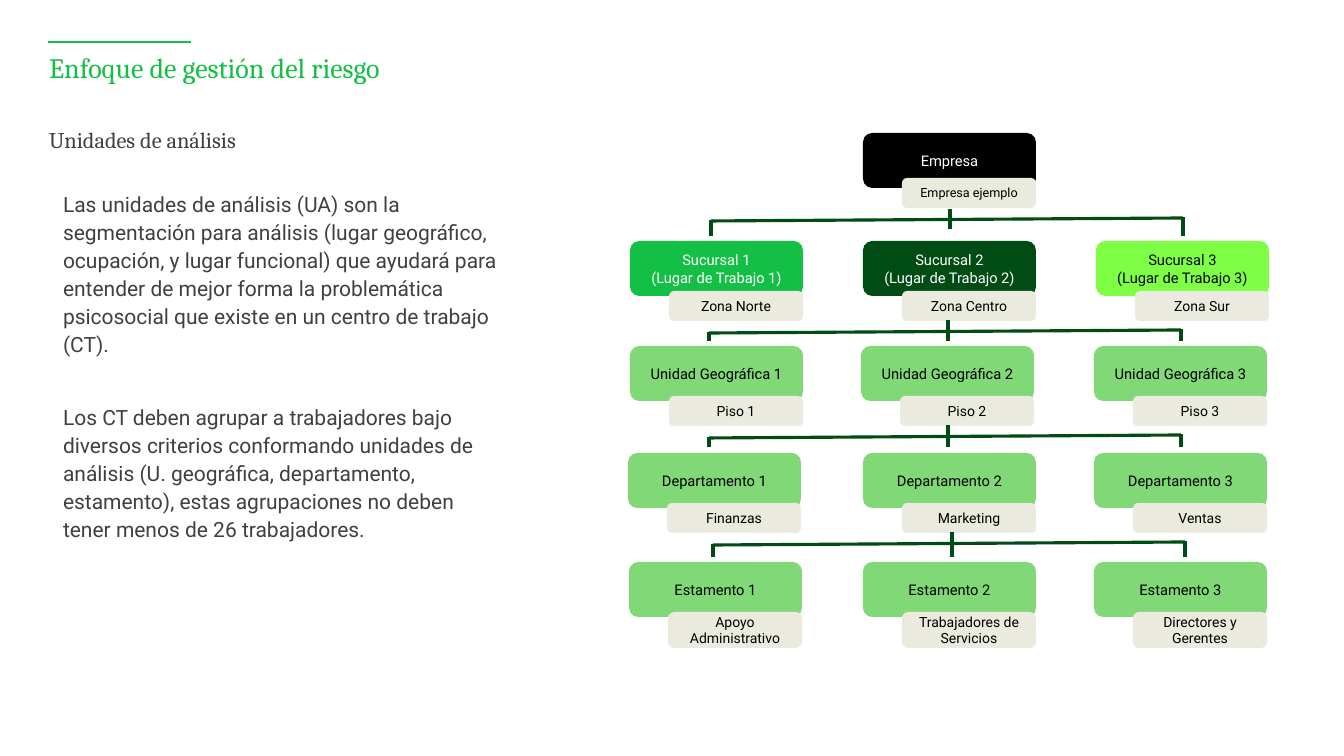
import lxml.etree
import pptx
import pptx.dml.color
import pptx.enum.shapes
import pptx.enum.text
import pptx.oxml.ns
import pptx.util

RGBColor = pptx.dml.color.RGBColor
GREEN = RGBColor(0x15, 0xBF, 0x45)
BRANCH_GREEN = RGBColor(0x13, 0xC0, 0x45)
DARK_GREEN = RGBColor(0x00, 0x4C, 0x14)
LIME = RGBColor(0x7E, 0xFF, 0x45)
SOFT_GREEN = RGBColor(0x81, 0xD8, 0x77)
BEIGE = RGBColor(0xEA, 0xEA, 0xDE)
GREY = RGBColor(0x40, 0x40, 0x40)
BLACK = RGBColor(0x00, 0x00, 0x00)
WHITE = RGBColor(0xFF, 0xFF, 0xFF)

EMU_PER_PX = 914400 / 100.8
HEADING_FONT = "Cambria"
BODY_FONT = "Roboto"
BOX_WIDTH, BOX_HEIGHT = 173, 55
TAG_WIDTH, TAG_SHIFT = 134, 39

PARAGRAPHS = [
    "Las unidades de análisis (UA) son la segmentación para análisis (lugar geográfico, "
    "ocupación, y lugar funcional) que ayudará para entender de mejor forma la problemática "
    "psicosocial que existe en un centro de trabajo (CT).",
    "Los CT deben agrupar a trabajadores bajo diversos criterios conformando unidades de "
    "análisis (U. geográfica, departamento, estamento), estas agrupaciones no deben tener "
    "menos de 26 trabajadores.",
]
BRANCH_STYLES = [(BRANCH_GREEN, WHITE), (DARK_GREEN, WHITE), (LIME, BLACK)]
UNIT_STYLES = [(SOFT_GREEN, BLACK)] * 3
LEVELS = [
    (241, 30, (630, 863, 1096), BRANCH_STYLES, ["Sucursal {}", "(Lugar de Trabajo {})"],
     ("Zona Norte", "Zona Centro", "Zona Sur")),
    (346, 30, (630, 861, 1094), UNIT_STYLES, ["Unidad Geográfica {}"],
     ("Piso 1", "Piso 2", "Piso 3")),
    (453, 30, (628, 863, 1094), UNIT_STYLES, ["Departamento {}"],
     ("Finanzas", "Marketing", "Ventas")),
    (562, 36, (629, 863, 1094), UNIT_STYLES, ["Estamento {}"],
     ("Apoyo Administrativo", "Trabajadores de Servicios", "Directores y Gerentes")),
]
FORKS = [(950, 209, 218, 229, 236), (948, 320, 330, 341, 341),
         (948, 425, 435, 447, 447), (952, 532, 542, 557, 557)]


class SlideBuilder:
    """Draws styled elements on one slide, with lengths in px."""

    def __init__(self, presentation):
        layout = presentation.slide_layouts.get_by_name("Two Content")
        self.slide = presentation.slides.add_slide(layout)

    def px(self, *lengths):
        return [pptx.util.Emu(round(length * EMU_PER_PX)) for length in lengths]

    def add_texts(self, frame, texts, size, font, color, alignment, line_spacing=None, gap=0):
        frame.word_wrap = True
        for index, text in enumerate(texts):
            paragraph = frame.add_paragraph() if index else frame.paragraphs[0]
            properties = paragraph._p.get_or_add_pPr()
            properties.set("marL", "0")
            properties.set("indent", "0")
            lxml.etree.SubElement(properties, pptx.oxml.ns.qn("a:buNone"))
            paragraph.alignment = alignment
            paragraph.line_spacing = line_spacing
            paragraph.space_before = pptx.util.Pt(gap if index else 0)
            run = paragraph.add_run()
            run.text = text
            run.font.size = pptx.util.Pt(size)
            run.font.name = font
            run.font.color.rgb = color

    def placeholder(self, index, bounds, texts, size, font, color, line_spacing,
                    gap=0, insets=(0, 0)):
        shape = self.slide.placeholders[index]
        shape.left, shape.top, shape.width, shape.height = self.px(*bounds)
        frame = shape.text_frame
        frame.auto_size = pptx.enum.text.MSO_AUTO_SIZE.NONE
        frame.vertical_anchor = pptx.enum.text.MSO_ANCHOR.TOP
        frame.margin_left, frame.margin_top = self.px(*insets)
        frame.margin_right, frame.margin_bottom = self.px(*insets)
        self.add_texts(frame, texts, size, font, color, pptx.enum.text.PP_ALIGN.LEFT,
                       line_spacing, gap)

    def box(self, bounds, texts, fill, color=BLACK, size=10.5):
        shape = self.slide.shapes.add_shape(
            pptx.enum.shapes.MSO_SHAPE.ROUNDED_RECTANGLE, *self.px(*bounds))
        shape.shadow.inherit = False
        shape.fill.solid()
        shape.fill.fore_color.rgb = fill
        shape.line.fill.background()
        frame = shape.text_frame
        frame.vertical_anchor = pptx.enum.text.MSO_ANCHOR.MIDDLE
        frame.margin_top = frame.margin_bottom = 0
        self.add_texts(frame, texts, size, BODY_FONT, color, pptx.enum.text.PP_ALIGN.CENTER)

    def unit(self, left, top, texts, tag, style, tag_drop=50, tag_height=30, tag_size=10):
        self.box((left, top, BOX_WIDTH, BOX_HEIGHT), texts, *style)
        self.box((left + TAG_SHIFT, top + tag_drop, TAG_WIDTH, tag_height), [tag], BEIGE,
                 size=tag_size)

    def line(self, start_x, start_y, end_x, end_y, color=DARK_GREEN, width=2.25):
        connector = self.slide.shapes.add_connector(
            pptx.enum.shapes.MSO_CONNECTOR.STRAIGHT,
            *self.px(start_x, start_y, end_x, end_y))
        connector.line.color.rgb = color
        connector.line.width = pptx.util.Pt(width)
        lxml.etree.SubElement(connector._element.spPr, pptx.oxml.ns.qn("a:effectLst"))

    def fork(self, stem, top, bus, stem_bottom, leg_bottom):
        left, right = stem - 239, stem + 233
        self.line(stem, top, stem, stem_bottom)
        self.line(right, bus, left, bus + 3)
        self.line(left, bus + 2, left, leg_bottom)
        self.line(right, bus - 1, right, leg_bottom)


def main():
    presentation = pptx.Presentation()
    presentation.slide_width = pptx.util.Emu(round(1344 * EMU_PER_PX))
    presentation.slide_height = pptx.util.Emu(round(756 * EMU_PER_PX))
    builder = SlideBuilder(presentation)

    builder.line(48, 42, 191, 42, GREEN, 1.75)
    builder.placeholder(0, (49, 54, 1088, 57), ["Enfoque de gestión del riesgo"],
                        20, HEADING_FONT, GREEN, 0.9)
    builder.placeholder(1, (49, 129, 1088, 39), ["Unidades de análisis"],
                        16, HEADING_FONT, GREY, 0.9)
    builder.placeholder(2, (53, 184, 464, 397), PARAGRAPHS, 15, BODY_FONT, GREY,
                        pptx.util.Pt(20), gap=32, insets=(10, 5))

    builder.unit(863, 133, ["Empresa"], "Empresa ejemplo", (BLACK, WHITE),
                 tag_drop=45, tag_size=9)
    for fork, (top, tag_height, lefts, styles, labels, tags) in zip(FORKS, LEVELS):
        builder.fork(*fork)
        for number, (left, style, tag) in enumerate(zip(lefts, styles, tags), 1):
            texts = [label.format(number) for label in labels]
            builder.unit(left, top, texts, tag, style, tag_height=tag_height)

    presentation.save("out.pptx")


if __name__ == "__main__":
    main()
